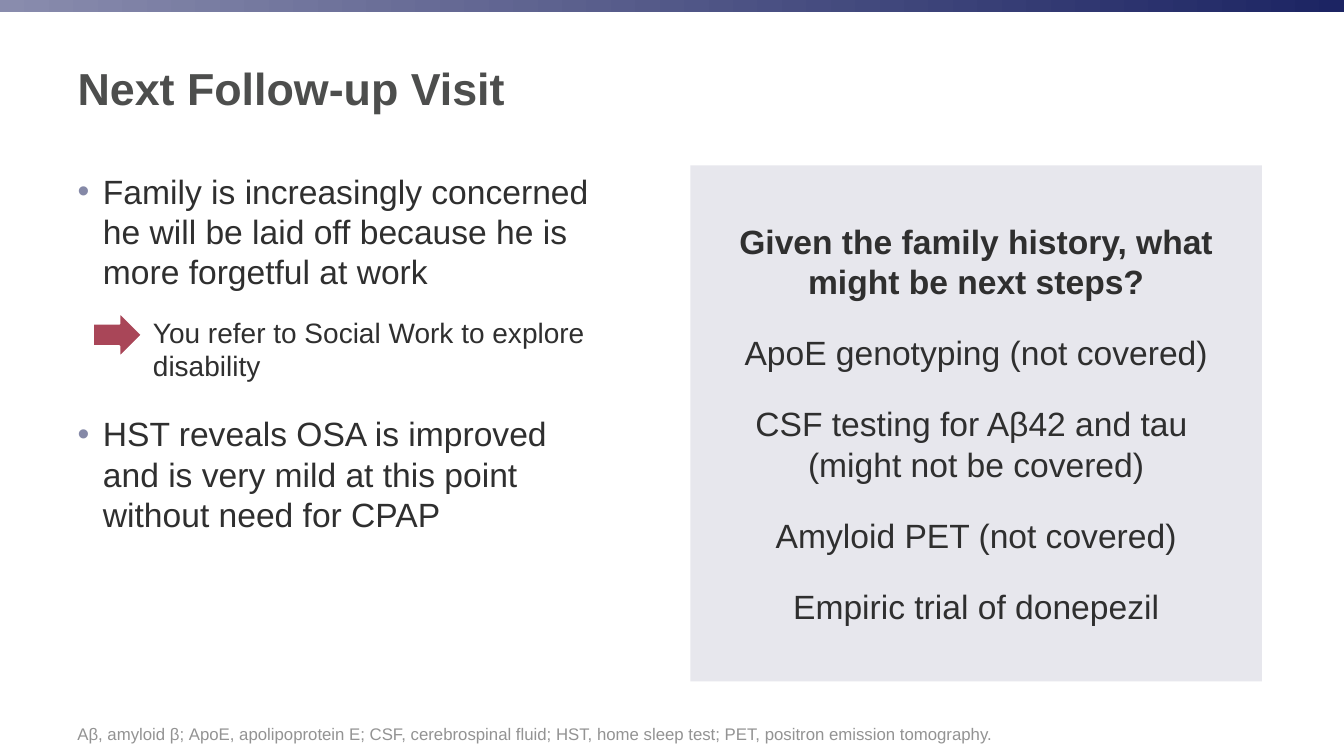
from pptx import Presentation
from pptx.dml.color import RGBColor
from pptx.enum.shapes import MSO_SHAPE as SHAPE
from pptx.enum.text import MSO_ANCHOR as ANCHOR, MSO_AUTO_SIZE as AUTOSIZE, PP_ALIGN as ALIGN
from pptx.util import Cm, Pt
from lxml.etree import SubElement
from pptx.oxml.ns import qn

# Content
TITLE = "Next Follow-up Visit"
FINDINGS = [  # (level, text)
    (0, "Family is increasingly concerned he will be laid off because he is more forgetful at work"),
    (1, "You refer to Social Work to explore disability"),
    (0, "HST reveals OSA is improved and is very mild at this point without need for CPAP"),
]
QUESTION = "Given the family history, what might be next steps?"
OPTIONS = [
    "ApoE genotyping (not covered)",
    "CSF testing for Aβ42 and tau \n(might not be covered)",
    "Amyloid PET (not covered)",
    "Empiric trial of donepezil",
]
FOOTNOTE = ("Aβ, amyloid β; ApoE, apolipoprotein E; CSF, cerebrospinal fluid; "
            "HST, home sleep test; PET, positron emission tomography.")

# Layout in cm and style
WIDTH, HEIGHT = 33.87, 19.05
LEFT, TOP, BODY_HEIGHT = 1.7, 4.17, 13
FONT, INK, BULLET = "Arial", "2F2F2F", "8589A7"
LEVELS = [  # text indent (cm), hanging (cm), size, space before, bullet
    (0.64, 0.64, 24, 10, "•"),
    (1.9, 0, 20, 5, None),  # the arrow stands in for the bullet
]


def rgb(color):
    return RGBColor.from_string(color)


def place(s, left, top, width, height):
    s.left, s.top, s.width, s.height = (Cm(v) for v in (left, top, width, height))


def prepare(s, anchor):
    tf = s.text_frame
    tf.word_wrap, tf.auto_size, tf.vertical_anchor = True, AUTOSIZE.NONE, anchor
    return tf


def style(p, size, color, bold=False, align=ALIGN.LEFT):
    p.alignment = align
    p.font.name, p.font.size, p.font.bold = FONT, Pt(size), bold
    p.font.color.rgb = rgb(color)


def set_bullet(p, char, indent=0, hanging=0):
    pr = p._p.get_or_add_pPr()
    pr.set("marL", str(Cm(indent)))
    pr.set("indent", str(-Cm(hanging)))
    if char:
        SubElement(SubElement(pr, qn("a:buClr")), qn("a:srgbClr"), val=BULLET)
        SubElement(pr, qn("a:buFont"), typeface=FONT)
        SubElement(pr, qn("a:buChar"), char=char)
    else:
        SubElement(pr, qn("a:buNone"))


def add_item(tf, i, text, before):
    p = tf.add_paragraph() if i else tf.paragraphs[0]
    p.text = text
    p.line_spacing = 1.0
    p.space_before, p.space_after = Pt(before if i else 0), Pt(12)
    return p


prs = Presentation()
prs.slide_width, prs.slide_height = Cm(WIDTH), Cm(HEIGHT)
slide = prs.slides.add_slide(prs.slide_layouts[3])
title, findings, steps = slide.placeholders

# Gradient bar along the top
bar = slide.shapes.add_shape(SHAPE.RECTANGLE, 0, 0, Cm(WIDTH), Cm(0.3))
bar.shadow.inherit = False
bar.line.fill.background()
bar.fill.gradient()
bar.fill.gradient_angle = 0
for stop, position, color in zip(bar.fill.gradient_stops, (0, 1), ("898CAD", "1C2463")):
    stop.position, stop.color.rgb = position, rgb(color)

# Title
place(title, LEFT, 0.56, 29.85, 3.3)
tf = prepare(title, ANCHOR.MIDDLE)
tf.text = TITLE
style(tf.paragraphs[0], 32, "4D4E4D", bold=True)

# Findings on the left
place(findings, LEFT, TOP, 13.54, BODY_HEIGHT)
tf = prepare(findings, ANCHOR.TOP)
for i, (level, text) in enumerate(FINDINGS):
    indent, hanging, size, before, char = LEVELS[level]
    p = add_item(tf, i, text, before)
    p.level = level
    set_bullet(p, char, indent, hanging)
    style(p, size, INK)

# Question and options in the tinted panel
place(steps, 17.4, TOP, 14.4, BODY_HEIGHT)
steps.fill.solid()
steps.fill.fore_color.rgb = rgb("E7E7ED")
tf = prepare(steps, ANCHOR.MIDDLE)
for i, text in enumerate([QUESTION] + OPTIONS):
    p = add_item(tf, i, text, 10)
    set_bullet(p, None)
    style(p, 24, INK, bold=i == 0, align=ALIGN.CENTER)

# Footnote
note = slide.shapes.add_textbox(Cm(LEFT), Cm(17.65), Cm(29.21), Cm(1.22))
tf = prepare(note, ANCHOR.BOTTOM)
tf.text = FOOTNOTE
style(tf.paragraphs[0], 12, "939393")

# Arrow marking the referral
arrow = slide.shapes.add_shape(SHAPE.RIGHT_ARROW, Cm(2.34), Cm(7.87), Cm(1.24), Cm(1.14))
arrow.shadow.inherit = False
arrow.fill.solid()
arrow.fill.fore_color.rgb = rgb("A94658")
arrow.line.color.rgb = rgb("FFFFFF")
arrow.line.width = Pt(1.5)

prs.save("out.pptx")
